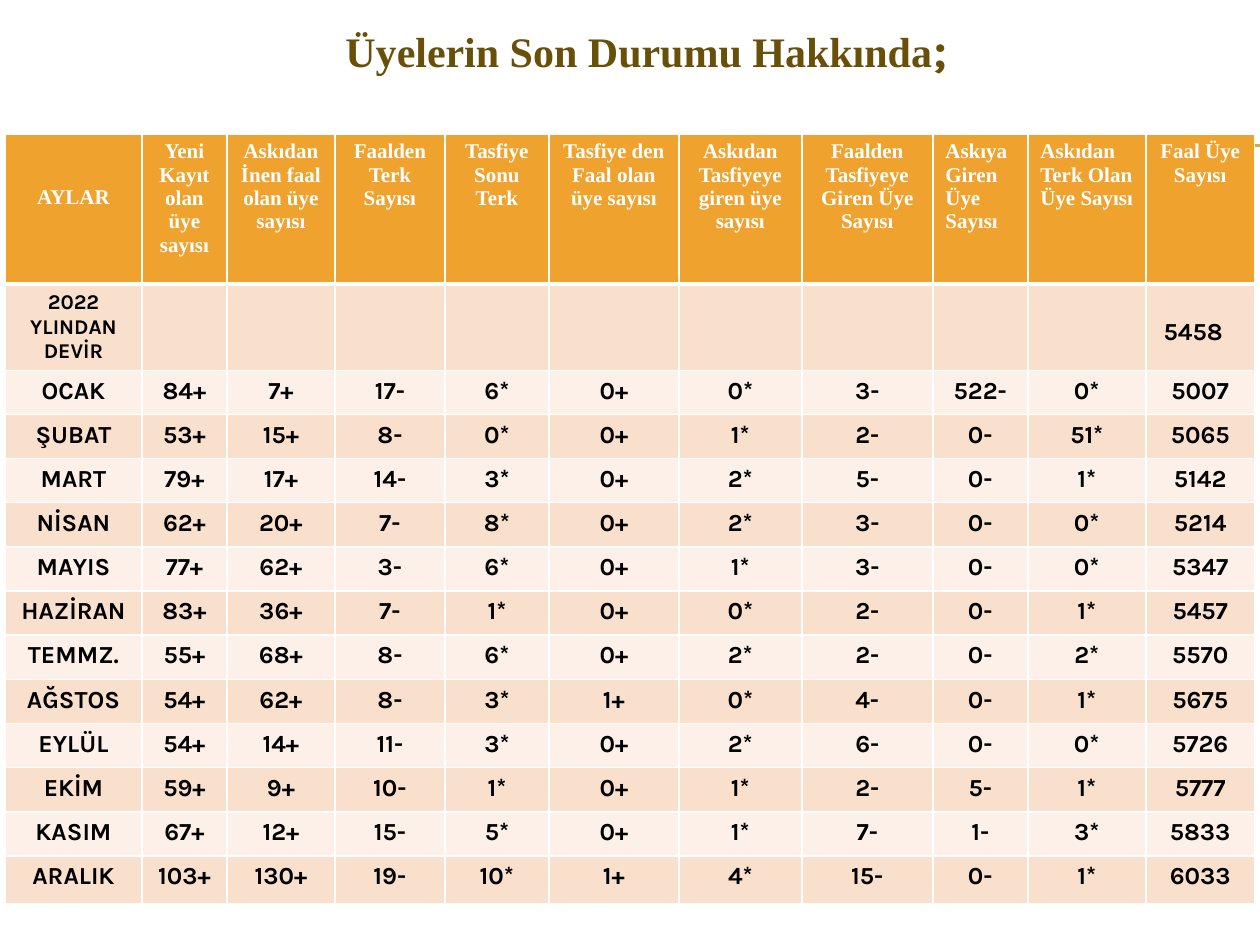
from lxml.etree import SubElement
from pptx import Presentation
from pptx.dml.color import RGBColor
from pptx.enum.shapes import MSO_CONNECTOR
from pptx.enum.text import MSO_ANCHOR, PP_ALIGN
from pptx.oxml import parse_xml
from pptx.oxml.ns import nsdecls, qn
from pptx.util import Pt

PX = 914400 // 126
ORANGE = RGBColor(0xF0, 0xA2, 0x2E)
PEACH = RGBColor(0xF9, 0xE0, 0xCD)
CREAM = RGBColor(0xFC, 0xF0, 0xE8)
BROWN = RGBColor(0x69, 0x50, 0x08)
WHITE = RGBColor(0xFF, 0xFF, 0xFF)
BLACK = RGBColor(0, 0, 0)
SERIF, SANS = "Times New Roman", "Karla"

TITLE = [("Üyelerin Son Durumu Hakkında", SERIF, 24), (";", SANS, 28)]
HEADERS = [
    "AYLAR", "Yeni Kayıt olan üye sayısı", "Askıdan İnen faal olan üye sayısı",
    "Faalden Terk Sayısı", "Tasfiye Sonu Terk", "Tasfiye den Faal olan üye sayısı",
    "Askıdan Tasfiyeye giren üye sayısı", "Faalden Tasfiyeye Giren Üye Sayısı",
    "Askıya Giren Üye Sayısı", "Askıdan Terk Olan Üye Sayısı", "Faal Üye Sayısı",
]
CARRIED_OVER = ["2022 YLINDAN DEVİR"] + [""] * 9 + ["5458"]
MONTHS = [row.split() for row in (
    "OCAK 84+ 7+ 17- 6* 0+ 0* 3- 522- 0* 5007",
    "ŞUBAT 53+ 15+ 8- 0* 0+ 1* 2- 0- 51* 5065",
    "MART 79+ 17+ 14- 3* 0+ 2* 5- 0- 1* 5142",
    "NİSAN 62+ 20+ 7- 8* 0+ 2* 3- 0- 0* 5214",
    "MAYIS 77+ 62+ 3- 6* 0+ 1* 3- 0- 0* 5347",
    "HAZİRAN 83+ 36+ 7- 1* 0+ 0* 2- 0- 1* 5457",
    "TEMMZ. 55+ 68+ 8- 6* 0+ 2* 2- 0- 2* 5570",
    "AĞSTOS 54+ 62+ 8- 3* 1+ 0* 4- 0- 1* 5675",
    "EYLÜL 54+ 14+ 11- 3* 0+ 2* 6- 0- 0* 5726",
    "EKİM 59+ 9+ 10- 1* 0+ 1* 2- 5- 1* 5777",
    "KASIM 67+ 12+ 15- 5* 0+ 1* 7- 1- 3* 5833",
    "ARALIK 103+ 130+ 19- 10* 1+ 4* 15- 0- 1* 6033",
)]
ROWS = [HEADERS, CARRIED_OVER] + MONTHS
COLUMN_WIDTHS = [137, 85, 108, 110, 104, 130, 123, 131, 95, 118, 109]
HEADER_HEIGHT, CARRIED_HEIGHT, LAST_HEIGHT = 150, 86, 48
MONTH_HEIGHT = 486 * PX // 11
ROW_HEIGHTS = ([HEADER_HEIGHT * PX, CARRIED_HEIGHT * PX]
               + [MONTH_HEIGHT] * 11 + [LAST_HEIGHT * PX])
TABLE_LEFT, TABLE_TOP = 5, 134
LEFT_ALIGNED_HEADERS = (8, 9)
TOP_MARGINS = {(0, 0): 52, (1, 10): 34}  # cells whose text starts lower


def add_rule(slide, y):
    rule = slide.shapes.add_connector(
        MSO_CONNECTOR.STRAIGHT, 71 * PX, y * PX, 1260 * PX, y * PX)
    rule.line.color.rgb = ORANGE
    rule.line.width = Pt(0.75)
    SubElement(rule._element.spPr, qn("a:effectLst"))


def set_borders(cell, top, bottom):
    """Draw white cell borders; top and bottom are widths in points."""
    properties = cell._tc.get_or_add_tcPr()
    widths = {"lnL": 1, "lnR": 1, "lnT": top, "lnB": bottom}
    for position, (side, width) in enumerate(widths.items()):
        properties.insert(position, parse_xml(
            f'<a:{side} {nsdecls("a")} w="{Pt(width)}"><a:solidFill>'
            f'<a:srgbClr val="{WHITE}"/></a:solidFill></a:{side}>'))


def fill_cell(cell, row, column, text):
    cell.fill.solid()
    cell.fill.fore_color.rgb = ORANGE if row == 0 else PEACH if row % 2 else CREAM
    set_borders(cell, 3 if row == 1 else 1, 3 if row == 0 else 1)
    if (row, column) in TOP_MARGINS:
        cell.margin_top = TOP_MARGINS[row, column] * PX
    cell.text = text
    para = cell.text_frame.paragraphs[0]
    para.alignment = PP_ALIGN.CENTER
    if row == 0 and column in LEFT_ALIGNED_HEADERS:
        para.alignment = PP_ALIGN.LEFT
    if (row, column) == (1, 10):
        para.alignment = PP_ALIGN.JUSTIFY
        cell.margin_left = 18 * PX
    para.font.name = SERIF if row == 0 else SANS
    para.font.size = Pt(12 if row == 0 or (row, column) == (1, 0) else 14)
    para.font.bold = True
    para.font.color.rgb = WHITE if row == 0 else BLACK


def add_members_table(slide):
    table = slide.shapes.add_table(
        len(ROWS), len(HEADERS), TABLE_LEFT * PX, TABLE_TOP * PX,
        sum(COLUMN_WIDTHS) * PX, sum(ROW_HEIGHTS)).table
    table.horz_banding = False
    for column, width in zip(table.columns, COLUMN_WIDTHS):
        column.width = width * PX
    for row, height in zip(table.rows, ROW_HEIGHTS):
        row.height = height
    for row, texts in enumerate(ROWS):
        for column, text in enumerate(texts):
            fill_cell(table.cell(row, column), row, column, text)


def add_title(slide):
    box = slide.shapes.add_textbox(78 * PX, 0, 1137 * PX, 96 * PX)
    frame = box.text_frame
    frame.word_wrap = True
    frame.vertical_anchor = MSO_ANCHOR.MIDDLE
    para = frame.paragraphs[0]
    para.alignment = PP_ALIGN.CENTER
    para.font.bold = True
    para.font.color.rgb = BROWN
    for text, font, size in TITLE:
        span = para.add_run()
        span.text = text
        span.font.name = font
        span.font.size = Pt(size)


def main():
    deck = Presentation()
    deck.slide_width, deck.slide_height = 1260 * PX, 945 * PX
    slide = deck.slides.add_slide(deck.slide_layouts[6])
    for y in (145, 146):
        add_rule(slide, y)
    add_members_table(slide)
    add_title(slide)
    deck.save("out.pptx")


if __name__ == "__main__":
    main()
